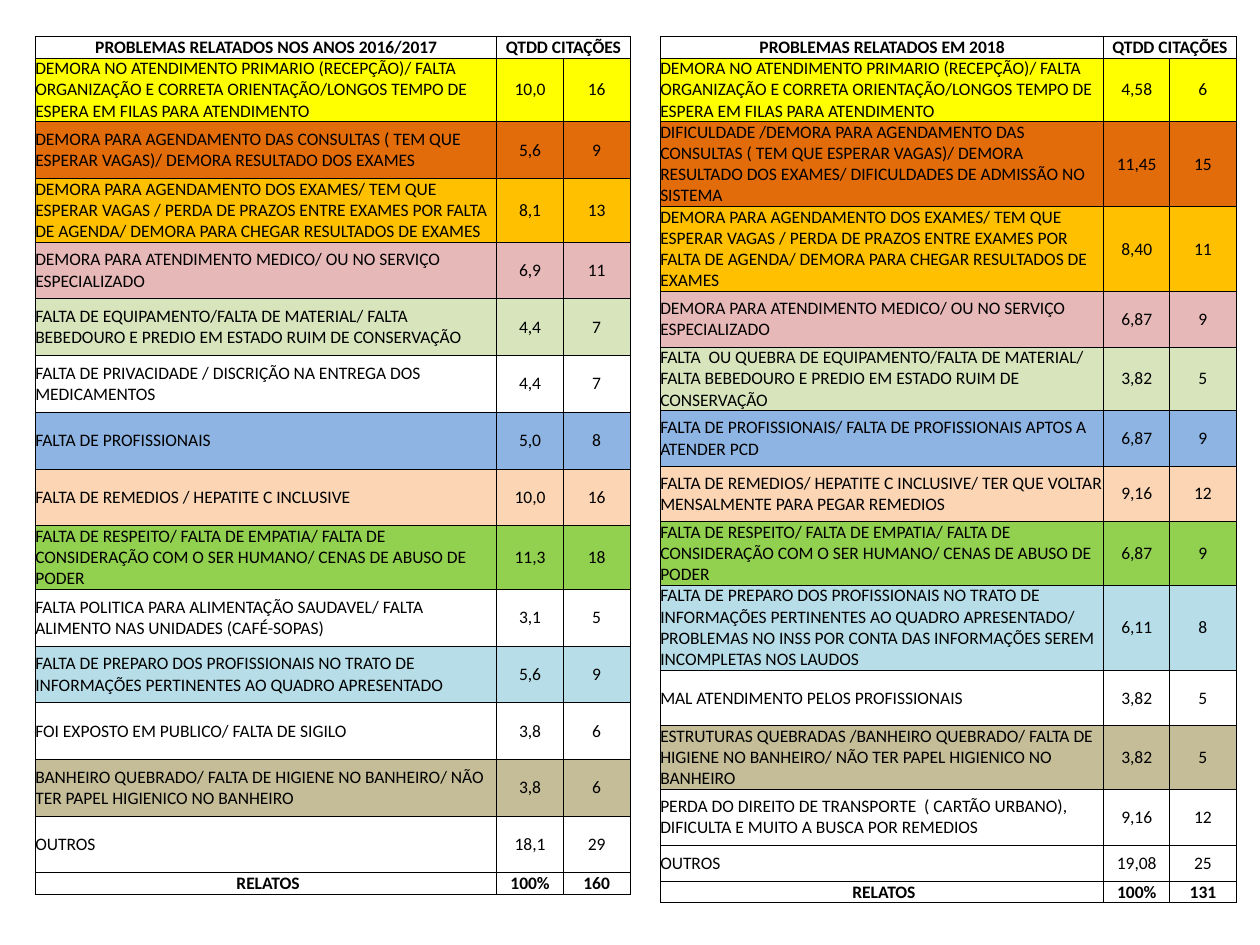
from itertools import product

from lxml.etree import SubElement
from pptx import Presentation
from pptx.dml.color import RGBColor
from pptx.enum.text import MSO_ANCHOR, PP_ALIGN
from pptx.oxml.ns import qn
from pptx.util import Inches, Pt

SLIDE_WIDTH, SLIDE_HEIGHT = Inches(10), Inches(7.5)
LINE_ROW, TWO_LINE_ROW, THREE_LINE_ROW, FOUR_LINE_ROW = 0.17, 0.44, 0.5, 0.67
EVEN_ROW = 0.45

# One colour for each kind of complaint, shared by both periods
RECEPTION, APPOINTMENTS, EXAMS = "FFFF00", "E26B0A", "FFC000"
DOCTOR, EQUIPMENT, STAFF = "E6B8B7", "D8E4BC", "8DB4E2"
MEDICINE, RESPECT, TRAINING = "FCD5B4", "92D050", "B7DEE8"
TOILETS, PLAIN = "C4BD97", None

RECEPTION_TEXT = ("DEMORA NO ATENDIMENTO PRIMARIO (RECEPÇÃO)/ FALTA ORGANIZAÇÃO E CORRETA "
                  "ORIENTAÇÃO/LONGOS TEMPO DE ESPERA EM FILAS PARA ATENDIMENTO")
EXAMS_TEXT = ("DEMORA PARA AGENDAMENTO DOS EXAMES/ TEM QUE ESPERAR VAGAS / PERDA DE PRAZOS "
              "ENTRE EXAMES POR FALTA DE AGENDA/ DEMORA PARA CHEGAR RESULTADOS DE EXAMES")
DOCTOR_TEXT = "DEMORA PARA ATENDIMENTO MEDICO/ OU NO SERVIÇO ESPECIALIZADO"
RESPECT_TEXT = ("FALTA DE RESPEITO/ FALTA DE EMPATIA/ FALTA DE CONSIDERAÇÃO COM O SER HUMANO/ "
                "CENAS DE ABUSO DE PODER")
TRAINING_TEXT = ("FALTA DE PREPARO DOS PROFISSIONAIS NO TRATO DE INFORMAÇÕES PERTINENTES AO "
                 "QUADRO APRESENTADO")

# Each complaint: text, percentage, citations, colour
COMPLAINTS_2016_2017 = [
    (RECEPTION_TEXT, "10,0", "16", RECEPTION),
    ("DEMORA PARA AGENDAMENTO DAS CONSULTAS ( TEM QUE ESPERAR VAGAS)/ DEMORA RESULTADO DOS "
     "EXAMES", "5,6", "9", APPOINTMENTS),
    (EXAMS_TEXT, "8,1", "13", EXAMS),
    (DOCTOR_TEXT, "6,9", "11", DOCTOR),
    ("FALTA DE EQUIPAMENTO/FALTA DE MATERIAL/ FALTA BEBEDOURO E PREDIO EM ESTADO RUIM DE "
     "CONSERVAÇÃO", "4,4", "7", EQUIPMENT),
    ("FALTA DE PRIVACIDADE / DISCRIÇÃO NA ENTREGA DOS MEDICAMENTOS", "4,4", "7", PLAIN),
    ("FALTA DE PROFISSIONAIS", "5,0", "8", STAFF),
    ("FALTA DE REMEDIOS / HEPATITE C INCLUSIVE", "10,0", "16", MEDICINE),
    (RESPECT_TEXT, "11,3", "18", RESPECT),
    ("FALTA POLITICA PARA ALIMENTAÇÃO SAUDAVEL/ FALTA ALIMENTO NAS UNIDADES (CAFÉ-SOPAS)",
     "3,1", "5", PLAIN),
    (TRAINING_TEXT, "5,6", "9", TRAINING),
    ("FOI EXPOSTO EM PUBLICO/ FALTA DE SIGILO", "3,8", "6", PLAIN),
    ("BANHEIRO QUEBRADO/ FALTA DE HIGIENE NO BANHEIRO/ NÃO TER PAPEL HIGIENICO NO BANHEIRO",
     "3,8", "6", TOILETS),
    ("OUTROS", "18,1", "29", PLAIN),
]
COMPLAINTS_2018 = [
    (RECEPTION_TEXT, "4,58", "6", RECEPTION),
    ("DIFICULDADE /DEMORA PARA AGENDAMENTO DAS CONSULTAS ( TEM QUE ESPERAR VAGAS)/ DEMORA "
     "RESULTADO DOS EXAMES/ DIFICULDADES DE ADMISSÃO NO SISTEMA", "11,45", "15", APPOINTMENTS),
    (EXAMS_TEXT, "8,40", "11", EXAMS),
    (DOCTOR_TEXT, "6,87", "9", DOCTOR),
    ("FALTA  OU QUEBRA DE EQUIPAMENTO/FALTA DE MATERIAL/ FALTA BEBEDOURO E PREDIO EM ESTADO "
     "RUIM DE CONSERVAÇÃO", "3,82", "5", EQUIPMENT),
    ("FALTA DE PROFISSIONAIS/ FALTA DE PROFISSIONAIS APTOS A ATENDER PCD", "6,87", "9", STAFF),
    ("FALTA DE REMEDIOS/ HEPATITE C INCLUSIVE/ TER QUE VOLTAR MENSALMENTE PARA PEGAR REMEDIOS",
     "9,16", "12", MEDICINE),
    (RESPECT_TEXT, "6,87", "9", RESPECT),
    (TRAINING_TEXT + "/ PROBLEMAS NO INSS POR CONTA DAS INFORMAÇÕES SEREM INCOMPLETAS NOS "
     "LAUDOS", "6,11", "8", TRAINING),
    ("MAL ATENDIMENTO PELOS PROFISSIONAIS", "3,82", "5", PLAIN),
    ("ESTRUTURAS QUEBRADAS /BANHEIRO QUEBRADO/ FALTA DE HIGIENE NO BANHEIRO/ NÃO TER PAPEL "
     "HIGIENICO NO BANHEIRO", "3,82", "5", TOILETS),
    ("PERDA DO DIREITO DE TRANSPORTE  ( CARTÃO URBANO), DIFICULTA E MUITO A BUSCA POR REMEDIOS",
     "9,16", "12", PLAIN),
    ("OUTROS", "19,08", "25", PLAIN),
]
HEIGHTS_2016_2017 = [EVEN_ROW] * len(COMPLAINTS_2016_2017)
HEIGHTS_2018 = [THREE_LINE_ROW, FOUR_LINE_ROW, FOUR_LINE_ROW, TWO_LINE_ROW, THREE_LINE_ROW,
                TWO_LINE_ROW, TWO_LINE_ROW, THREE_LINE_ROW, FOUR_LINE_ROW, TWO_LINE_ROW,
                THREE_LINE_ROW, TWO_LINE_ROW, 0.29]


def color(hex_code):
    return RGBColor.from_string(hex_code)


def add_borders(cell):
    properties = cell._tc.get_or_add_tcPr()
    for position, side in enumerate(("lnL", "lnR", "lnT", "lnB")):
        border = SubElement(properties, qn(f"a:{side}"), w=str(Pt(0.5)))
        SubElement(SubElement(border, qn("a:solidFill")), qn("a:srgbClr"), val="000000")
        properties.insert(position, border)


def format_cell(cell, text, fill, bold, centered):
    cell.text = text
    cell.vertical_anchor = MSO_ANCHOR.MIDDLE
    cell.margin_left = cell.margin_right = cell.margin_top = cell.margin_bottom = 0
    paragraph = cell.text_frame.paragraphs[0]
    paragraph.alignment = PP_ALIGN.CENTER if centered else PP_ALIGN.LEFT
    font = paragraph.font
    font.name, font.size, font.bold = "Calibri", Pt(10), bold
    font.color.rgb = color("000000")
    if fill:
        cell.fill.solid()
        cell.fill.fore_color.rgb = color(fill)
    else:
        cell.fill.background()
    add_borders(cell)


def add_complaint_table(slide, box, number_share, heading, complaints, heights, total):
    """Place one period's table in box; number_share is each number column's part of its width."""
    records = [(heading, "QTDD CITAÇÕES", "", PLAIN), *complaints,
               (" RELATOS", "100%", total, PLAIN)]
    frame = slide.shapes.add_table(len(records), 3, *box)
    table = frame.table
    table.first_row = table.horz_banding = False
    for column, share in zip(table.columns, (1 - 2 * number_share, number_share, number_share)):
        column.width = int(box[2] * share)
    for row, height in zip(table.rows, [LINE_ROW, *heights, LINE_ROW]):
        row.height = Inches(height)
    frame.height = box[3]

    last = len(records) - 1
    for row, column in product(range(len(records)), range(3)):
        outer = row in (0, last)
        format_cell(table.cell(row, column), records[row][column], records[row][3],
                    bold=outer, centered=outer or column > 0)
    table.cell(0, 1).merge(table.cell(0, 2))


def main():
    presentation = Presentation()
    presentation.slide_width, presentation.slide_height = SLIDE_WIDTH, SLIDE_HEIGHT
    slide = presentation.slides.add_slide(presentation.slide_layouts[6])
    top, height = Inches(0.29), Inches(6.83)
    add_complaint_table(slide, (Inches(0.28), top, Inches(4.72), height), 0.112,
                        "PROBLEMAS RELATADOS NOS ANOS 2016/2017",
                        COMPLAINTS_2016_2017, HEIGHTS_2016_2017, "160")
    add_complaint_table(slide, (Inches(5.24), top, Inches(4.57), height), 0.115,
                        "PROBLEMAS RELATADOS EM 2018",
                        COMPLAINTS_2018, HEIGHTS_2018, "131")
    presentation.save("out.pptx")


if __name__ == "__main__":
    main()
